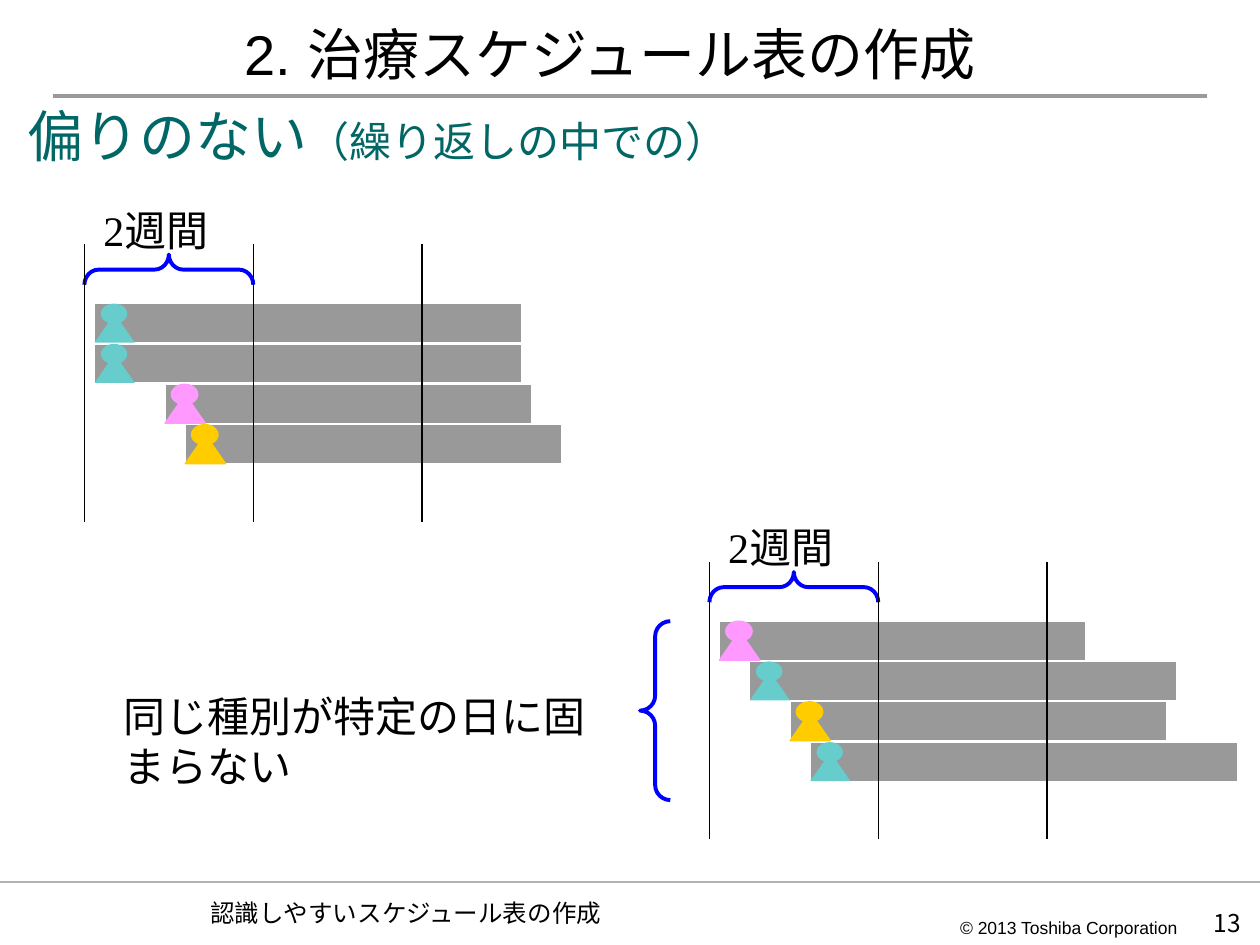
"""Build the treatment schedule slide comparing two two-week timetables."""
from dataclasses import dataclass

from lxml import etree
from pptx import Presentation
from pptx import util as u
from pptx.dml.color import RGBColor
from pptx.enum import shapes, text
from pptx.oxml.ns import qn

SHAPE = shapes.MSO_SHAPE
ALIGN = text.PP_ALIGN
ANCHOR = text.MSO_ANCHOR


@dataclass(frozen=True)
class Theme:
    ink: str = "000000"
    paper: str = "FFFFFF"
    heading: str = "006666"
    bar: str = "999999"
    footer_rule: str = "B2B2B2"
    brace: str = "0000FF"
    teal: str = "66CCCC"
    pink: str = "FF99FF"
    yellow: str = "FFCC00"
    sans: str = "Arial"
    serif: str = "Times New Roman"
    footer_font: str = "Montserrat"
    japanese: str = "Noto Sans CJK JP"
    title_size: int = 32
    body_size: int = 24
    footer_size: int = 14
    copyright_size: int = 10
    thin: float = 0.75
    thick: float = 2.25


THEME = Theme()
BAR_LENGTHS = {THEME.teal: 3.39, THEME.pink: 2.91, THEME.yellow: 2.99}
DAY, WEEKS, ROW, BAR_HEIGHT = 0.08, 1.34, 0.32, 0.31
GRID_HEIGHT, FIRST_ROW = 2.2, 0.47


def write_text(frame, runs, *, font, color=THEME.ink, align=ALIGN.LEFT,
               anchor=ANCHOR.TOP, margins=(0, 0), wrap=True, spacing=None):
    """Fill a text frame with one paragraph of (wording, size) runs."""
    frame.word_wrap = wrap
    frame.vertical_anchor = anchor
    frame.margin_left = frame.margin_right = u.Inches(margins[0])
    frame.margin_top = frame.margin_bottom = u.Inches(margins[1])
    paragraph = frame.paragraphs[0]
    paragraph.alignment = align
    paragraph.line_spacing = spacing
    for wording, size in runs:
        run = paragraph.add_run()
        run.text = wording
        run.font.size = u.Pt(size)
        run.font.name = font
        run.font.color.rgb = RGBColor.from_string(color)
        east_asian = etree.SubElement(run._r.get_or_add_rPr(), qn("a:ea"))
        east_asian.set("typeface", THEME.japanese)


class SlideBuilder:
    def __init__(self, slide, theme):
        self.slide = slide
        self.theme = theme

    def shape(self, kind, left, top, width, height, *, fill=None, line=None,
              weight=THEME.thin, parent=None):
        owner = parent or self.slide
        shape = owner.shapes.add_shape(
            kind, *map(u.Inches, (left, top, width, height)))
        shape.shadow.inherit = False
        if fill:
            shape.fill.solid()
            shape.fill.fore_color.rgb = RGBColor.from_string(fill)
        else:
            shape.fill.background()
        if line:
            shape.line.color.rgb = RGBColor.from_string(line)
            shape.line.width = u.Pt(weight)
        else:
            shape.line.fill.background()
        return shape

    def line(self, start, end, color, weight=THEME.thin):
        connector = self.slide.shapes.add_connector(
            shapes.MSO_CONNECTOR.STRAIGHT, *map(u.Inches, (*start, *end)))
        connector.line.color.rgb = RGBColor.from_string(color)
        connector.line.width = u.Pt(weight)
        etree.SubElement(connector._element.spPr, qn("a:effectLst"))

    def text(self, left, top, width, height, runs, **style):
        box = self.slide.shapes.add_textbox(
            *map(u.Inches, (left, top, width, height)))
        write_text(box.text_frame, runs, **style)

    def title(self, wording):
        panel = self.shape(SHAPE.RECTANGLE, 0.83, 0.21, 8.03, 0.47,
                           fill=self.theme.paper)
        color = panel._element.spPr.find(f".//{qn('a:srgbClr')}")
        etree.SubElement(color, qn("a:alpha")).set("val", "60000")
        write_text(panel.text_frame, [(wording, self.theme.title_size)],
                   font=self.theme.sans, align=ALIGN.CENTER,
                   margins=(0, 0.05), spacing=0.8)

    def brace(self, left, top, height, curve, rotation=0):
        brace = self.shape(SHAPE.LEFT_BRACE, left, top, 0.24, height,
                           line=self.theme.brace, weight=self.theme.thick)
        brace.adjustments[0] = curve
        brace.rotation = rotation

    def person(self, left, top, color):
        group = self.slide.shapes.add_group_shape()
        outline = None if color == self.theme.teal else color
        for kind, *box in (
            (SHAPE.OVAL, left + 0.05, top, 0.21, 0.16),
            (SHAPE.ISOSCELES_TRIANGLE, left, top + 0.08, 0.32, 0.23),
        ):
            self.shape(kind, *box, fill=color, line=outline, parent=group)

    def schedule(self, left, top, patients, separators):
        """Draw a timetable of (start day, colour) patients."""
        self.brace(left + 0.55, top - 0.47, WEEKS, 0.473, rotation=90)
        self.text(left + 0.15, top - 0.32, 0.94, 0.39,
                  [("2週間", self.theme.body_size)], font=self.theme.serif)
        rows = [(left + (day + 1) * DAY, top + FIRST_ROW + index * ROW, color)
                for index, (day, color) in enumerate(patients)]
        for x, y, color in rows:
            self.shape(SHAPE.RECTANGLE, x, y, BAR_LENGTHS[color], BAR_HEIGHT,
                       fill=self.theme.bar, line=self.theme.paper)
        for row, start, end in separators:
            y = top + FIRST_ROW + row * ROW
            self.line((start, y), (end, y), self.theme.paper)
        for x, y, color in rows:
            self.person(x, y, color)
        for period in range(3):
            x = left + period * WEEKS
            self.line((x, top), (x, top + GRID_HEIGHT), self.theme.ink)


def main():
    presentation = Presentation()
    presentation.slide_width = u.Inches(10)
    presentation.slide_height = u.Inches(7.5)
    slide = presentation.slides.add_slide(presentation.slide_layouts[6])
    builder = SlideBuilder(slide, THEME)

    builder.line((0, 7), (10, 7), THEME.footer_rule, 1)
    builder.line((0.42, 0.76), (9.58, 0.76), THEME.bar, THEME.thick)
    builder.text(7.62, 7.28, 1.75, 0.17,
                 [("© 2013 Toshiba Corporation", THEME.copyright_size)],
                 font=THEME.sans, anchor=ANCHOR.MIDDLE, wrap=False)
    builder.text(9.22, 7.16, 0.63, 0.33, [("13", THEME.footer_size)],
                 font=THEME.japanese, anchor=ANCHOR.MIDDLE, align=ALIGN.RIGHT)
    builder.text(1.67, 7.08, 5.75, 0.33,
                 [("認識しやすいスケジュール表の作成", THEME.footer_size)],
                 font=THEME.footer_font, anchor=ANCHOR.MIDDLE)
    builder.text(0.12, 0.76, 6.19, 0.64,
                 [("偏りのない", THEME.title_size),
                  ("（繰り返しの中での）", THEME.body_size)],
                 font=THEME.serif, color=THEME.heading, margins=(0.1, 0.05))

    builder.schedule(0.67, 1.94, [(0, THEME.teal), (0, THEME.teal),
                                  (7, THEME.pink), (9, THEME.yellow)],
                     [(1, 0.67, 4.21), (1, 0.75, 3.74),
                      (2, 1.06, 4.05), (4, 1.46, 5.55)])
    builder.schedule(5.63, 4.46, [(0, THEME.pink), (3, THEME.teal),
                                  (7, THEME.yellow), (9, THEME.teal)],
                     [(2, 6.26, 9.41)])
    builder.brace(5.08, 4.93, 1.42, 0.5)
    builder.text(0.98, 5.48, 3.86, 0.94,
                 [("同じ種別が特定の日に固まらない", THEME.body_size)],
                 font=THEME.serif)
    builder.title("2. 治療スケジュール表の作成")
    presentation.save("out.pptx")


if __name__ == "__main__":
    main()
